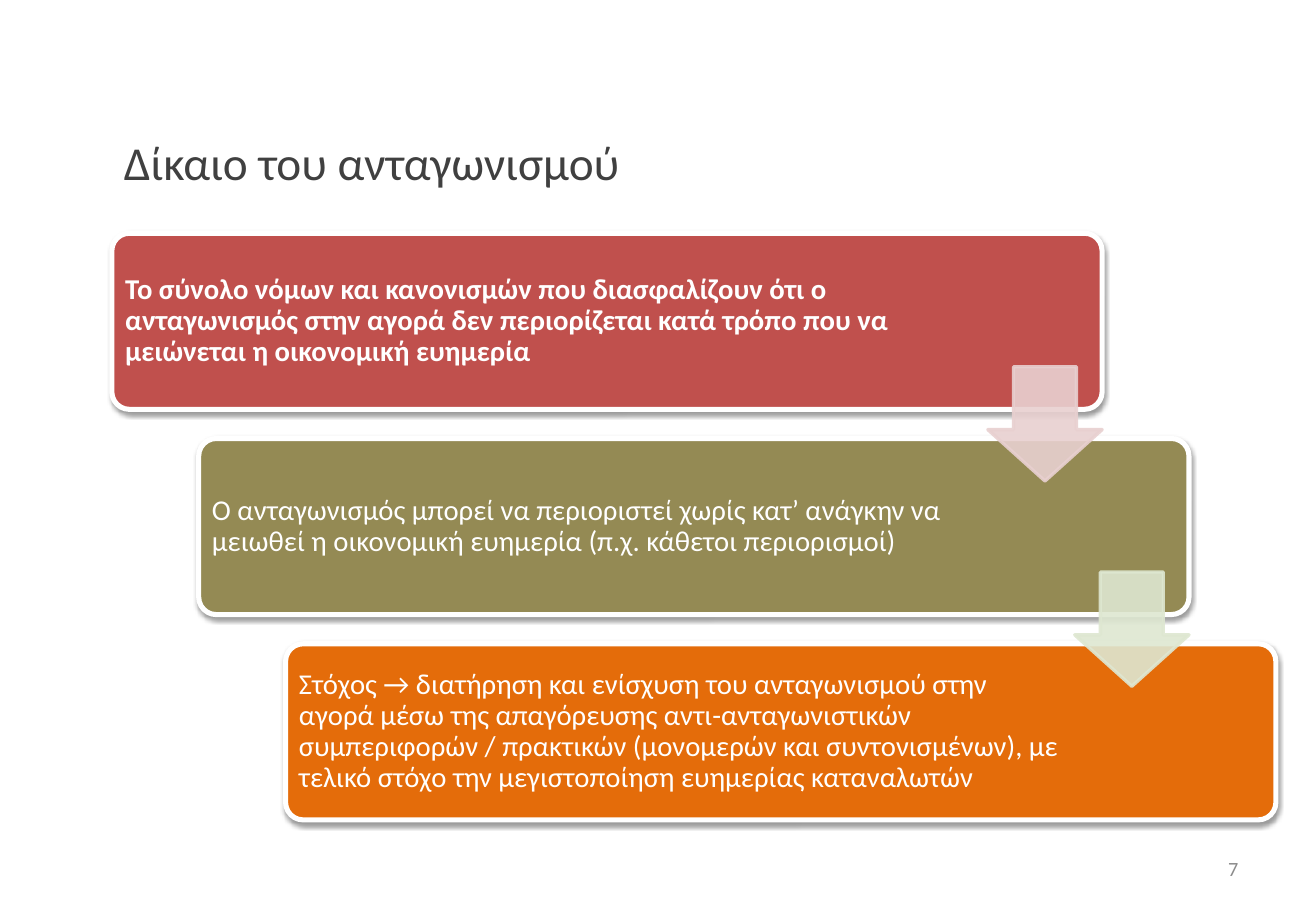
"""Build a slide on competition law: three stepped cards joined by arrows."""
from lxml.etree import SubElement
from pptx import Presentation
from pptx.dml.color import RGBColor
from pptx.enum.shapes import MSO_SHAPE
from pptx.enum.text import MSO_ANCHOR, PP_ALIGN
from pptx.oxml.ns import qn
from pptx.util import Inches, Pt

WHITE = RGBColor(0xFF, 0xFF, 0xFF)
DARK = RGBColor(0x40, 0x40, 0x40)
GREY = RGBColor(0x8C, 0x8C, 0x8C)
RED = RGBColor(0xC0, 0x50, 0x4D)
OLIVE = RGBColor(0x94, 0x8A, 0x54)
ORANGE = RGBColor(0xE4, 0x6C, 0x0A)
PINK = RGBColor(0xE8, 0xD0, 0xD0)
PALE_GREEN = RGBColor(0xDE, 0xE7, 0xD1)

TITLE = "Δίκαιο του ανταγωνισμού"
PAGE_NUMBER = "7"
STEPS = [
    ("Το σύνολο νόμων και κανονισμών που διασφαλίζουν ότι ο ανταγωνισμός στην "
     "αγορά δεν περιορίζεται κατά τρόπο που να μειώνεται η οικονομική ευημερία",
     RED, True, 6.58),
    ("O ανταγωνισμός μπορεί να περιοριστεί χωρίς κατ’ ανάγκην να μειωθεί η "
     "οικονομική ευημερία (π.χ. κάθετοι περιορισμοί)",
     OLIVE, False, 6.4),
    ("Στόχος → διατήρηση και ενίσχυση του ανταγωνισμού στην αγορά μέσω της "
     "απαγόρευσης αντι-ανταγωνιστικών συμπεριφορών / πρακτικών (μονομερών και "
     "συντονισμένων), με τελικό στόχο την μεγιστοποίηση ευημερίας καταναλωτών",
     ORANGE, False, 6.4),
]
ARROW_COLORS = [PINK, PALE_GREEN]

SLIDE_W, SLIDE_H = 10.83, 7.5
LEFT, TOP, CONTENT_W, CONTENT_H = 0.92, 1.92, 9.58, 4.83
CARD_W, CARD_H = 8.15, 1.45
STEP_X = (CONTENT_W - CARD_W) / (len(STEPS) - 1)
STEP_Y = (CONTENT_H - CARD_H) / (len(STEPS) - 1)
CARD_PAD = 0.04
TEXT_INSET = 0.07
ARROW = 0.94
ARROW_RISE = 0.59


def add_text(slide, box, text, size, color, bold=False,
             align=PP_ALIGN.LEFT, inset=None, spacing=None):
    frame = slide.shapes.add_textbox(*map(Inches, box)).text_frame
    frame.word_wrap = True
    frame.vertical_anchor = MSO_ANCHOR.MIDDLE
    if inset is not None:
        frame.margin_left = frame.margin_right = Inches(inset)
        frame.margin_top = frame.margin_bottom = Inches(inset)
    paragraph = frame.paragraphs[0]
    paragraph.alignment = align
    paragraph.line_spacing = spacing
    run = paragraph.add_run()
    run.text = text
    run.font.name = "Calibri"
    run.font.size = Pt(size)
    run.font.bold = bold
    run.font.color.rgb = color


def add_figure(slide, preset, box, adjustments, fill, line, line_width):
    figure = slide.shapes.add_shape(preset, *map(Inches, box))
    for index, value in enumerate(adjustments):
        figure.adjustments[index] = value
    figure.fill.solid()
    figure.fill.fore_color.rgb = fill
    figure.line.color.rgb = line
    figure.line.width = Pt(line_width)
    figure.shadow.inherit = False
    return figure._element.spPr


def set_alpha(color_element, percent):
    SubElement(color_element, qn("a:alpha"), val=str(percent * 1000))


def add_shadow(properties):
    shadow = SubElement(properties.find(qn("a:effectLst")), qn("a:outerShdw"),
                        blurRad=str(Pt(3.1)), dist=str(Pt(1.6)),
                        dir="5400000", rotWithShape="0")
    set_alpha(SubElement(shadow, qn("a:srgbClr"), val="000000"), 38)


def main():
    deck = Presentation()
    deck.slide_width, deck.slide_height = Inches(SLIDE_W), Inches(SLIDE_H)
    slide = deck.slides.add_slide(deck.slide_layouts[6])
    add_text(slide, (LEFT, 0.85, CONTENT_W, 0.96), TITLE, 28, DARK)

    corners = [(LEFT + i * STEP_X, TOP + i * STEP_Y) for i in range(len(STEPS))]
    for (x, y), (text, color, bold, text_w) in zip(corners, STEPS):
        card = add_figure(slide, MSO_SHAPE.ROUNDED_RECTANGLE,
                          (x, y, CARD_W, CARD_H), [0.1], color, WHITE, 3)
        add_shadow(card)
        text_box = (x + CARD_PAD, y + CARD_PAD, text_w, CARD_H - 2 * CARD_PAD)
        add_text(slide, text_box, text, 17, WHITE, bold,
                 inset=TEXT_INSET, spacing=0.9)

    for (x, y), color in zip(corners, ARROW_COLORS):
        arrow_box = (x + CARD_W - ARROW, y + STEP_Y - ARROW_RISE, ARROW, ARROW)
        arrow = add_figure(slide, MSO_SHAPE.DOWN_ARROW, arrow_box,
                           [0.55, 0.45], color, color, 2)
        for color_element in arrow.iter(qn("a:srgbClr")):
            set_alpha(color_element, 90)

    add_text(slide, (7.76, 6.95, 2.53, 0.4), PAGE_NUMBER, 12, GREY,
             align=PP_ALIGN.RIGHT)
    deck.save("out.pptx")


if __name__ == "__main__":
    main()
